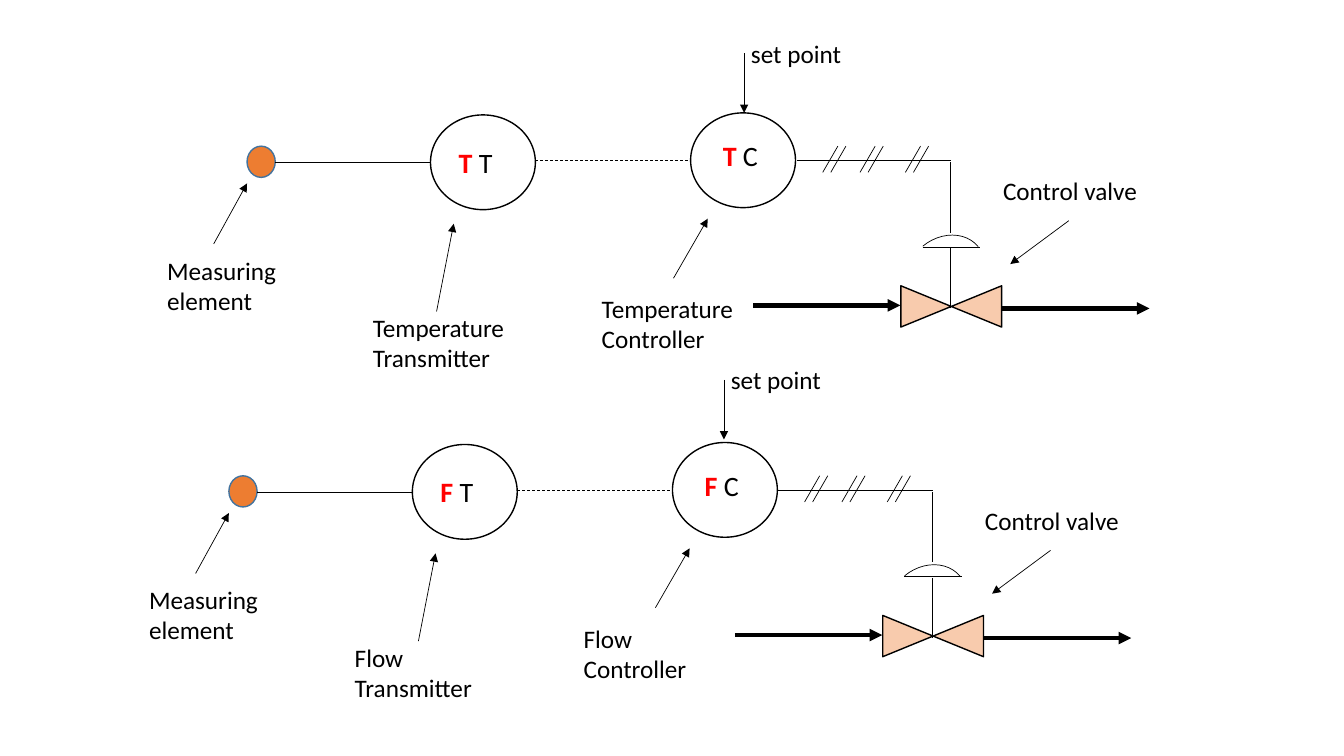
import pptx
import pptx.util
import pptx.dml.color
import pptx.enum.dml
import pptx.enum.shapes
import pptx.enum.text
import pptx.oxml.ns
import lxml.etree

Inches = pptx.util.Inches
Pt = pptx.util.Pt
SHAPE = pptx.enum.shapes.MSO_SHAPE

COLORS = {
    "ink": "000000",
    "circle": "FFFFFF",
    "signal": "FF0000",
    "sensor": "ED7D31",
    "sensor_edge": "43739E",
    "valve": "F8CBAD",
}


def rgb(name):
    return pptx.dml.color.RGBColor.from_string(COLORS[name])


def write(paragraph, text, size=18, color="ink", bold=False, font="Calibri"):
    run = paragraph.add_run()
    run.text = text
    run.font.size = Pt(size)
    run.font.name = font
    run.font.bold = bold
    run.font.color.rgb = rgb(color)


class Diagram:
    """Draws in one group at a time, shifted by the group's offset."""

    thin, outline, pipe = 0.5, 1, 3

    def __init__(self, slide):
        self.slide = slide

    def start_loop(self, dx, dy):
        self.shapes = self.slide.shapes.add_group_shape().shapes
        self.dx, self.dy = dx, dy

    def place(self, x, y):
        return Inches(x + self.dx), Inches(y + self.dy)

    def shape(self, kind, x, y, w, h, fill=None, edge="ink", width=outline, rotation=0):
        shape = self.shapes.add_shape(kind, *self.place(x, y), Inches(w), Inches(h))
        shape.shadow.inherit = False
        shape.rotation = rotation
        if fill:
            shape.fill.solid()
            shape.fill.fore_color.rgb = rgb(fill)
        else:
            shape.fill.background()
        shape.line.color.rgb = rgb(edge)
        shape.line.width = Pt(width)

    def line(self, x1, y1, x2, y2, width=thin, arrow=False, dashed=False):
        line = self.shapes.add_connector(
            pptx.enum.shapes.MSO_CONNECTOR.STRAIGHT, *self.place(x1, y1), *self.place(x2, y2))
        line.line.color.rgb = rgb("ink")
        line.line.width = Pt(width)
        if dashed:
            line.line.dash_style = pptx.enum.dml.MSO_LINE.DASH
        qn = pptx.oxml.ns.qn
        if arrow:
            lxml.etree.SubElement(line.line._get_or_add_ln(), qn("a:tailEnd"), type="triangle")
        lxml.etree.SubElement(line._element.spPr, qn("a:effectLst"))

    def text_frame(self, x, y, w, h):
        frame = self.shapes.add_textbox(*self.place(x, y), Inches(w), Inches(h)).text_frame
        frame.word_wrap = True
        frame.auto_size = pptx.enum.text.MSO_AUTO_SIZE.SHAPE_TO_FIT_TEXT
        return frame

    def label(self, x, y, *lines, w=1.94):
        frame = self.text_frame(x, y, w, 0.1 + 0.3 * max(len(lines), 1))
        for i, text in enumerate(lines):
            write(frame.add_paragraph() if i else frame.paragraphs[0], text)

    def tag(self, x, y, variable, role):
        paragraph = self.text_frame(x, y, 0.65, 0.44).paragraphs[0]
        write(paragraph, variable, size=20, color="signal", bold=True)
        write(paragraph, " " + role, size=20)


def draw_loop(diagram, quantity, dx, dy, set_point_shift):
    diagram.start_loop(dx, dy)
    variable = quantity[0]

    # Measuring element, transmitter and controller
    diagram.shape(SHAPE.OVAL, 2.45, 1.45, 0.28, 0.31, "sensor", "sensor_edge")
    diagram.line(2.73, 1.61, 4.27, 1.61)
    diagram.shape(SHAPE.OVAL, 4.27, 1.14, 1.04, 0.94, "circle")
    diagram.line(5.31, 1.59, 6.85, 1.59, dashed=True)
    diagram.shape(SHAPE.OVAL, 6.85, 1.12, 1.04, 0.94, "circle")

    # Pneumatic signal line with pairs of slashes
    diagram.line(7.9, 1.59, 9.43, 1.59)
    for pair_x in (8.98, 8.53, 8.16):
        for x in (pair_x, pair_x + 0.08):
            diagram.line(x + 0.15, 1.45, x, 1.71)

    # Control valve with its actuator
    diagram.shape(SHAPE.FLOWCHART_COLLATE, 9.23, 2.54, 0.41, 1, "valve", rotation=270)
    diagram.line(9.43, 3.06, 9.43, 2.46)
    diagram.line(9.15, 2.45, 9.72, 2.45)
    diagram.shape(SHAPE.ARC, 8.96, 2.36, 0.84, 0.71, width=diagram.thin, rotation=320.2)
    diagram.line(9.43, 1.61, 9.43, 2.31)

    # Process flow
    diagram.line(7.47, 3.03, 8.93, 3.03, diagram.pipe, arrow=True)
    diagram.line(9.93, 3.06, 11.4, 3.06, diagram.pipe, arrow=True)

    # Labels and their pointers
    diagram.label(1.56, 2.48, "Measuring element")
    diagram.label(5.87, 2.86, quantity, "Controller")
    diagram.label(3.6, 3.05, quantity, "Transmitter")
    diagram.label(9.85, 1.69, "Control valve")
    for pointer in ((2.12, 2.42, 2.45, 1.82), (6.68, 2.76, 7.02, 2.17),
                    (4.33, 3.09, 4.5, 2.22), (10.6, 2.19, 10.02, 2.62)):
        diagram.line(*pointer, arrow=True)
    diagram.tag(4.45, 1.39, variable, "T")
    diagram.tag(7.07, 1.33, variable, "C")

    # Set point
    shift_x, shift_y = set_point_shift
    diagram.label(7.35 + shift_x, 0.33 + shift_y, "set point", w=1.14)
    x = 7.38 + shift_x
    diagram.line(x, 0.53 + shift_y, x, 1.12 + shift_y, arrow=True)


def main():
    deck = pptx.Presentation()
    deck.slide_width, deck.slide_height = Inches(13.33), Inches(7.5)
    diagram = Diagram(deck.slides.add_slide(deck.slide_layouts[6]))
    draw_loop(diagram, "Temperature", 0, 0, (0, 0))
    draw_loop(diagram, "Flow", -0.18, 3.27, (-0.02, -0.03))
    deck.save("out.pptx")


if __name__ == "__main__":
    main()
